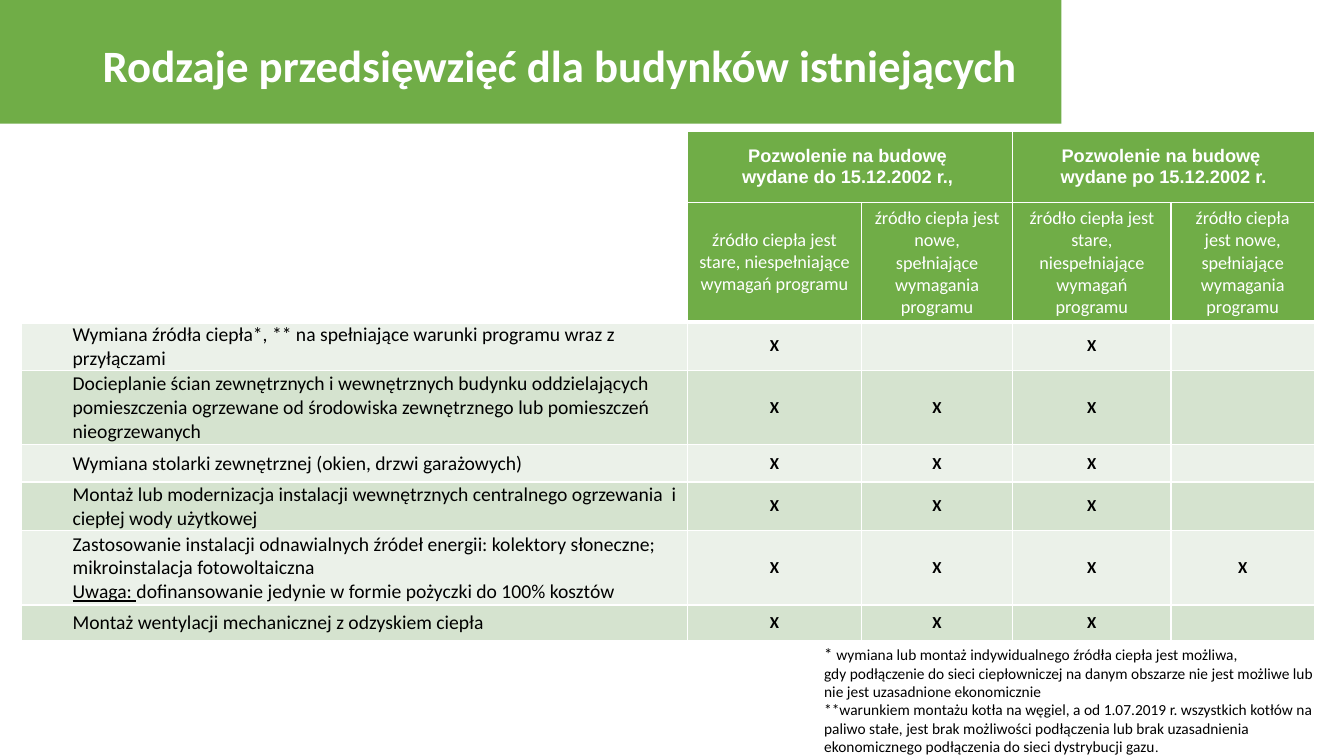
from collections import namedtuple

from lxml import etree
from pptx import Presentation
from pptx.dml.color import RGBColor
from pptx.enum import shapes, text
from pptx.oxml.ns import qn
from pptx.util import Cm, Pt

GREEN = RGBColor(0x70, 0xAD, 0x47)
PALE = RGBColor(0xEB, 0xF1, 0xE9)
SAGE = RGBColor(0xD5, 0xE3, 0xCF)
WHITE = RGBColor(0xFF, 0xFF, 0xFF)
BLACK = RGBColor(0, 0, 0)

Box = namedtuple("Box", "left top width height")

COLUMN_WIDTHS = [16.79, 4.39, 3.81, 3.99, 3.61]
ROW_HEIGHTS = [1.8, 2.59, 0.89, 1.88, 0.94, 0.89, 1.88, 0.89]
PERMITS = ["Pozwolenie na budowę \nwydane do 15.12.2002 r., ",
           "Pozwolenie na budowę \nwydane po 15.12.2002 r."]
HEAT_SOURCES = ["źródło ciepła jest stare, niespełniające wymagań programu",
                "źródło ciepła jest nowe, spełniające wymagania programu"]
REMARK = "Uwaga: "
# Each measure with one mark per heat source column
MEASURES = [
    ("Wymiana źródła ciepła*, ** na spełniające warunki programu wraz z przyłączami", "X-X-"),
    ("Docieplanie ścian zewnętrznych i wewnętrznych budynku oddzielających pomieszczenia "
     "ogrzewane od środowiska zewnętrznego lub pomieszczeń nieogrzewanych", "XXX-"),
    ("Wymiana stolarki zewnętrznej (okien, drzwi garażowych)", "XXX-"),
    ("Montaż lub modernizacja instalacji wewnętrznych centralnego ogrzewania  i ciepłej "
     "wody użytkowej", "XXX-"),
    ("Zastosowanie instalacji odnawialnych źródeł energii: kolektory słoneczne; "
     "mikroinstalacja fotowoltaiczna\n" + REMARK
     + "dofinansowanie jedynie w formie pożyczki do 100% kosztów", "XXXX"),
    ("Montaż wentylacji mechanicznej z odzyskiem ciepła", "XXX-"),
]


def style_runs(paragraph, size, color, bold=False, font="Calibri"):
    for run in paragraph.runs:
        run.font.size, run.font.bold, run.font.name = Pt(size), bold, font
        run.font.color.rgb = color
    for line_break in paragraph._p.findall(qn("a:br")):
        etree.SubElement(line_break, qn("a:rPr"), sz=str(size * 100))


def set_borders(cell, top=1, bottom=1):
    properties = cell._tc.get_or_add_tcPr()
    widths = {"lnL": 1, "lnR": 1, "lnT": top, "lnB": bottom}
    for position, (side, width) in enumerate(widths.items()):
        line = etree.Element(qn("a:" + side), w=str(Pt(width)))
        fill = etree.SubElement(line, qn("a:solidFill"))
        etree.SubElement(fill, qn("a:srgbClr"), val=str(WHITE))
        properties.insert(position, line)


def fill_cell(cell, content, fill, size, color, bold=False, font="Calibri"):
    """Fill a cell with vertically and horizontally centred text."""
    cell.fill.solid()
    cell.fill.fore_color.rgb = fill
    cell.vertical_anchor = text.MSO_ANCHOR.MIDDLE
    paragraph = cell.text_frame.paragraphs[0]
    paragraph.alignment = text.PP_ALIGN.CENTER
    if content:
        paragraph.text = content
        style_runs(paragraph, size, color, bold, font)
    else:
        etree.SubElement(paragraph._p, qn("a:endParaRPr"), sz=str(size * 100))


def fill_measure(cell, measure, fill):
    """Fill a first-column cell with indented text, its remark underlined."""
    before, remark, after = measure.partition(REMARK)
    fill_cell(cell, before + remark, fill, 14, BLACK)
    cell.margin_left = cell.margin_right = cell.margin_top = Cm(0.03)
    cell.margin_bottom = 0
    paragraph = cell.text_frame.paragraphs[0]
    paragraph.alignment = text.PP_ALIGN.LEFT
    paragraph.level = 1
    indent = paragraph._p.get_or_add_pPr()
    indent.set("marL", str(Cm(1.27)))
    indent.set("indent", "0")
    if remark:
        paragraph.runs[-1].font.underline = True
        paragraph.add_run().text = after
        font = paragraph.runs[-1].font
        font.size, font.name, font.color.rgb = Pt(14), "Calibri", BLACK


def add_text_box(slide, box):
    frame = slide.shapes.add_textbox(*map(Cm, box)).text_frame
    frame.word_wrap = True
    return frame


def add_banner(slide, box):
    band = slide.shapes.add_shape(shapes.MSO_SHAPE.RECTANGLE, *map(Cm, box))
    band.shadow.inherit = False
    band.fill.solid()
    band.fill.fore_color.rgb = GREEN
    band.line.fill.background()
    title = add_text_box(slide, Box(box.left + 2.34, box.top + 0.53,
                                    box.width - 2.54, box.height - 0.73))
    title.vertical_anchor = text.MSO_ANCHOR.MIDDLE
    heading = title.paragraphs[0]
    heading.text = "Rodzaje przedsięwzięć dla budynków istniejących"
    heading.line_spacing = 0.9
    style_runs(heading, 32, WHITE, bold=True)


def add_measures_table(slide, box):
    table = slide.shapes.add_table(len(ROW_HEIGHTS), len(COLUMN_WIDTHS),
                                   *map(Cm, box)).table
    table.first_row = table.horz_banding = False
    for column, width in zip(table.columns, COLUMN_WIDTHS):
        column.width = Cm(width)
    for row, height in zip(table.rows, ROW_HEIGHTS):
        row.height = Cm(height)

    corner = table.cell(0, 0)
    corner.merge(table.cell(1, 0))
    corner.fill.background()
    for index, permit in enumerate(PERMITS):
        first = 1 + 2 * index
        table.cell(0, first).merge(table.cell(0, first + 1))
        fill_cell(table.cell(0, first), permit, GREEN, 13, WHITE, True, "Arial")
        for offset, source in enumerate(HEAT_SOURCES):
            fill_cell(table.cell(1, first + offset), source, GREEN, 13, WHITE)

    for row, (measure, marks) in enumerate(MEASURES, start=2):
        fill = SAGE if row % 2 else PALE
        fill_measure(table.cell(row, 0), measure, fill)
        for column, mark in enumerate(marks, start=1):
            fill_cell(table.cell(row, column), mark.strip("-"), fill, 12, BLACK, True)

    for row in range(len(ROW_HEIGHTS)):
        for column in range(len(COLUMN_WIDTHS)):
            set_borders(table.cell(row, column), top=3 if row == 2 else 1,
                        bottom=3 if row == 1 else 1)


def add_footnotes(slide, box):
    heat = add_text_box(slide, Box(box.left, box.top, box.width, 1.7))
    heat.text = ("* \n"
                 "gdy podłączenie do sieci ciepłowniczej na danym obszarze nie jest możliwe "
                 "lub nie jest uzasadnione ekonomicznie")
    star, condition = heat.paragraphs
    star.add_run().text = "wymiana lub montaż indywidualnego źródła ciepła jest możliwa,"
    style_runs(star, 11, BLACK)
    star.runs[0].font.size = Pt(12)
    style_runs(condition, 11, BLACK)

    boiler = add_text_box(slide, Box(box.left, box.top + 1.43, box.width - 0.26, 1.68))
    boiler.text = ("**warunkiem montażu kotła na węgiel, a od 1.07.2019 r. wszystkich kotłów "
                   "na paliwo stałe, jest brak możliwości podłączenia lub brak uzasadnienia "
                   "ekonomicznego podłączenia do sieci dystrybucji gazu")
    limit = boiler.paragraphs[0]
    limit.add_run().text = "."
    style_runs(limit, 11, BLACK)
    limit.runs[-1].font.size = Pt(10)


def main():
    deck = Presentation()
    deck.slide_width, deck.slide_height = Cm(33.87), Cm(19.05)
    slide = deck.slides.add_slide(deck.slide_layouts[6])
    add_banner(slide, Box(0, 0, 26.75, 3.12))
    add_measures_table(slide, Box(0.53, 3.3, sum(COLUMN_WIDTHS), sum(ROW_HEIGHTS)))
    add_footnotes(slide, Box(20.52, 16.1, 13.26, 3.11))
    deck.save("out.pptx")


if __name__ == "__main__":
    main()
